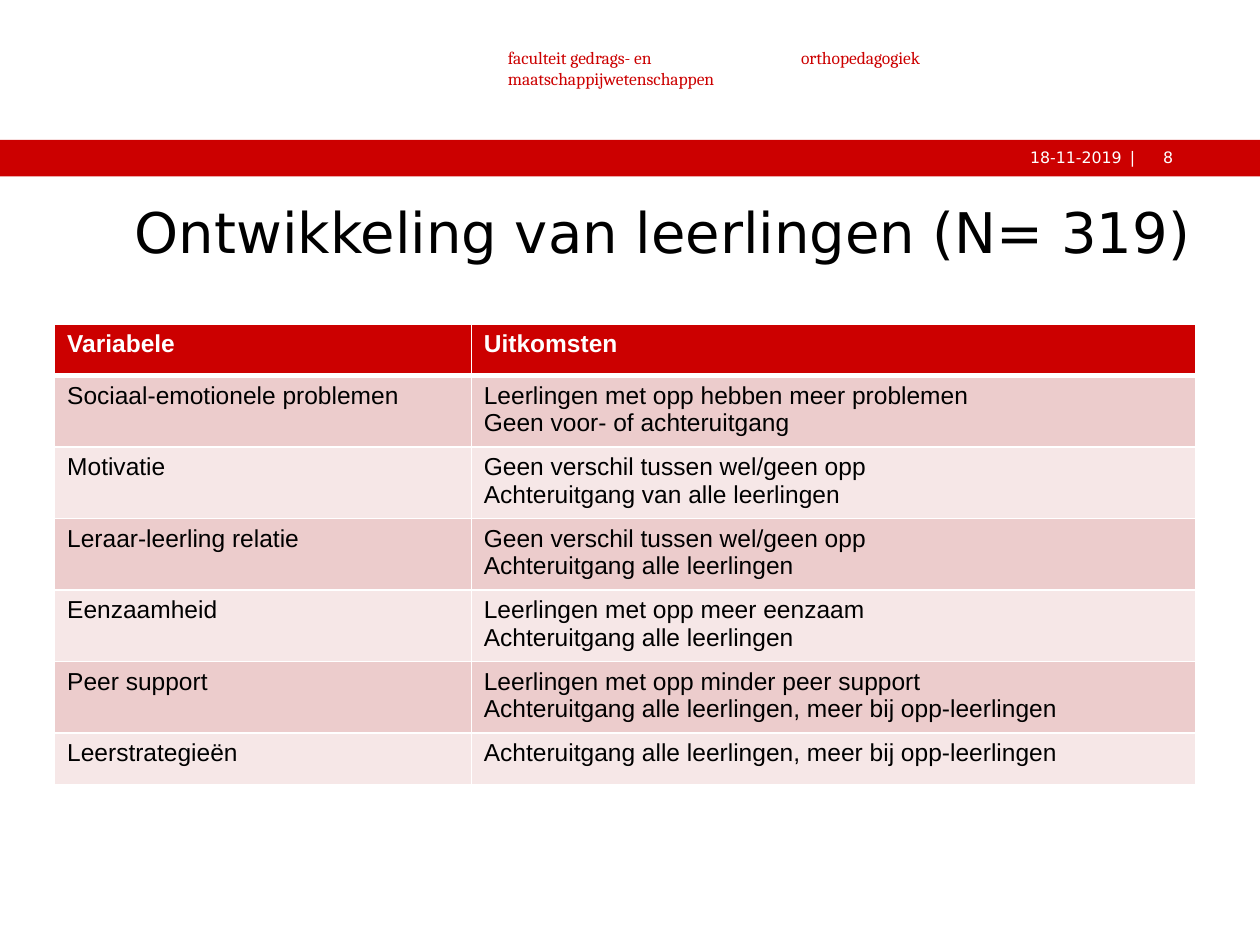
from dataclasses import dataclass

from lxml.etree import SubElement
from pptx import Presentation
from pptx.dml.color import RGBColor
from pptx.enum.shapes import MSO_SHAPE
from pptx.enum.text import MSO_ANCHOR, PP_ALIGN
from pptx.oxml.ns import qn
from pptx.slide import Slide
from pptx.table import _Cell
from pptx.text.text import TextFrame
from pptx.util import Cm, Pt


@dataclass(frozen=True)
class Theme:
    red: str = "CC0000"
    white: str = "FFFFFF"
    black: str = "000000"
    bands: tuple[str, str] = ("ECCCCC", "F6E7E7")
    title_font: str = "DejaVu Sans"
    unit_font: str = "Cambria"
    table_font: str = "Arial"
    title_size: int = 32
    table_size: int = 14
    unit_size: int = 10
    bar_size: int = 9
    border: int = 1
    header_border: int = 3


@dataclass(frozen=True)
class Area:
    left: float
    top: float
    width: float
    height: float

    def lengths(self) -> tuple[Cm, Cm, Cm, Cm]:
        return Cm(self.left), Cm(self.top), Cm(self.width), Cm(self.height)


@dataclass(frozen=True)
class Label:
    text: str
    area: Area
    font: str
    size: int
    color: str
    align: PP_ALIGN = PP_ALIGN.LEFT
    anchor: MSO_ANCHOR = MSO_ANCHOR.TOP
    insets: tuple[float, float, float, float] = (0, 0, 0, 0)


@dataclass(frozen=True)
class Finding:
    variable: str
    outcomes: str


THEME = Theme()

LABELS = [
    Label("8", Area(22.94, 2.97, 0.71, 0.38), THEME.title_font, THEME.bar_size,
          THEME.white, PP_ALIGN.RIGHT),
    Label("|", Area(22.78, 2.97, 0.15, 0.38), THEME.title_font, THEME.bar_size,
          THEME.white),
    Label("18-11-2019", Area(20.5, 2.97, 2.11, 0.38), THEME.title_font,
          THEME.bar_size, THEME.white, PP_ALIGN.RIGHT),
    Label("faculteit gedrags- en\nmaatschappijwetenschappen",
          Area(10.24, 0.94, 4.55, 0.86), THEME.unit_font, THEME.unit_size, THEME.red),
    Label("orthopedagogiek", Area(16.15, 0.94, 5, 1.17), THEME.unit_font,
          THEME.unit_size, THEME.red),
    Label("Ontwikkeling van leerlingen (N= 319)", Area(0, 3.56, 25.4, 2.21),
          THEME.title_font, THEME.title_size, THEME.black,
          anchor=MSO_ANCHOR.MIDDLE, insets=(2.72, 0.13, 0.76, 0.13)),
]

HEADER = Finding("Variabele", "Uitkomsten")
FINDINGS = [
    Finding("Sociaal-emotionele problemen",
            "Leerlingen met opp hebben meer problemen\nGeen voor- of achteruitgang"),
    Finding("Motivatie",
            "Geen verschil tussen wel/geen opp\nAchteruitgang van alle leerlingen"),
    Finding("Leraar-leerling relatie",
            "Geen verschil tussen wel/geen opp\nAchteruitgang alle leerlingen"),
    Finding("Eenzaamheid",
            "Leerlingen met opp meer eenzaam\nAchteruitgang alle leerlingen"),
    Finding("Peer support",
            "Leerlingen met opp minder peer support\n"
            "Achteruitgang alle leerlingen, meer bij opp-leerlingen"),
    Finding("Leerstrategieën",
            "Achteruitgang alle leerlingen, meer bij opp-leerlingen"),
]
COLUMN_WIDTHS = (8.4, 14.61)
ROW_HEIGHT = 1.04


def write_text(frame: TextFrame, text: str, *, font: str, size: int, color: str,
               bold: bool = False, align: PP_ALIGN = PP_ALIGN.LEFT) -> None:
    frame.text = text
    for para in frame.paragraphs:
        para.alignment = align
        for span in para.runs:
            span.font.name = font
            span.font.size = Pt(size)
            span.font.bold = bold
            span.font.color.rgb = RGBColor.from_string(color)


def add_label(page: Slide, label: Label) -> None:
    frame = page.shapes.add_textbox(*label.area.lengths()).text_frame
    frame.word_wrap = True
    frame.vertical_anchor = label.anchor
    (frame.margin_left, frame.margin_top,
     frame.margin_right, frame.margin_bottom) = map(Cm, label.insets)
    write_text(frame, label.text, font=label.font, size=label.size,
               color=label.color, align=label.align)


def add_bar(page: Slide, area: Area, color: str) -> None:
    bar = page.shapes.add_shape(MSO_SHAPE.RECTANGLE, *area.lengths())
    bar.shadow.inherit = False
    bar.fill.solid()
    bar.fill.fore_color.rgb = RGBColor.from_string(color)
    bar.line.fill.background()


def add_borders(cell: _Cell, widths: dict[str, int], color: str) -> None:
    properties = cell._tc.get_or_add_tcPr()
    for side, width in widths.items():
        line = SubElement(properties, qn(f"a:ln{side}"), w=str(Pt(width)))
        fill = SubElement(line, qn("a:solidFill"))
        SubElement(fill, qn("a:srgbClr"), val=color)


def add_findings(page: Slide, left: float, top: float) -> None:
    rows = [HEADER, *FINDINGS]
    area = Area(left, top, sum(COLUMN_WIDTHS), ROW_HEIGHT * len(rows))
    table = page.shapes.add_table(len(rows), len(COLUMN_WIDTHS), *area.lengths()).table
    table.horz_banding = False
    for column, width in zip(table.columns, COLUMN_WIDTHS):
        column.width = Cm(width)
    for index, finding in enumerate(rows):
        table.rows[index].height = Cm(ROW_HEIGHT)
        heading = index == 0
        background = THEME.red if heading else THEME.bands[(index - 1) % 2]
        borders = dict.fromkeys("LRTB", THEME.border)
        if heading:
            borders["B"] = THEME.header_border
        elif index == 1:
            borders["T"] = THEME.header_border
        for cell, text in zip(table.rows[index].cells,
                              (finding.variable, finding.outcomes)):
            add_borders(cell, borders, THEME.white)
            cell.fill.solid()
            cell.fill.fore_color.rgb = RGBColor.from_string(background)
            write_text(cell.text_frame, text, font=THEME.table_font,
                       size=THEME.table_size, bold=heading,
                       color=THEME.white if heading else THEME.black)


def main() -> None:
    deck = Presentation()
    deck.slide_width, deck.slide_height = Cm(25.4), Cm(19.05)
    page = deck.slides.add_slide(deck.slide_layouts[6])
    add_bar(page, Area(0, 2.82, 25.4, 0.74), THEME.red)
    for label in LABELS:
        add_label(page, label)
    add_findings(page, 1.1, 6.53)
    deck.save("out.pptx")


if __name__ == "__main__":
    main()
